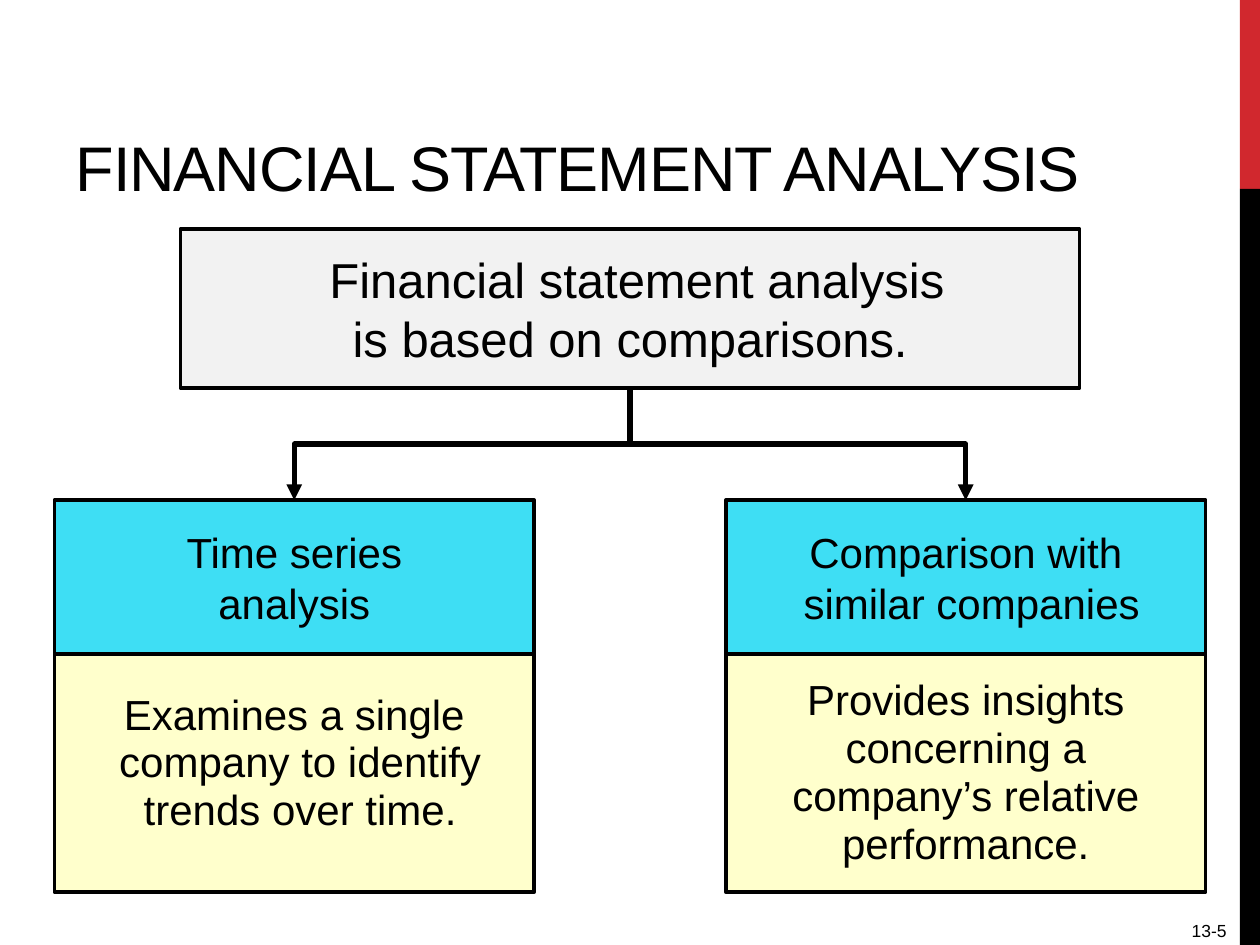
from lxml.etree import SubElement
from pptx import Presentation
from pptx.dml.color import RGBColor
from pptx.enum.shapes import MSO_CONNECTOR as Connector, MSO_SHAPE as Shape
from pptx.enum.text import MSO_ANCHOR as Anchor, MSO_AUTO_SIZE as AutoSize, PP_ALIGN as Align
from pptx.oxml.ns import qn
from pptx.util import Pt

COLORS = {"red": "D1282E", "black": "000000", "gray": "F2F2F2", "cyan": "3EDEF4", "cream": "FFFFCC"}
TITLE = "FINANCIAL STATEMENT ANALYSIS"
PREMISE = " Financial statement analysis\nis based on comparisons."
PAGE = "13-5"
BRANCHES = [
    {"left": 31, "detail_top": 362.9, "heading": "Time series\nanalysis",
     "detail": "Examines a single\n company to identify\n trends over time."},
    {"left": 414.7, "detail_top": 373.7, "heading": "Comparison with\n similar companies",
     "detail": "Provides insights\nconcerning a\ncompany’s relative\nperformance."},
]
STRIPES = [(0, 108, "red"), (108, 432, "black")]
PREMISE_BOX = (103, 131, 514, 90.7)
BRANCH_WIDTH, HEADING_TOP, HEADING_HEIGHT, DETAIL_BOTTOM = 274.3, 285.8, 87.9, 509.8


def color(name):
    return RGBColor.from_string(COLORS[name])


def place(shape, left, top, width, height):
    shape.left, shape.top, shape.width, shape.height = Pt(left), Pt(top), Pt(width), Pt(height)


def write(shape, text, size, align=Align.CENTER, anchor=Anchor.MIDDLE, wrap=True):
    frame = shape.text_frame
    frame.auto_size, frame.word_wrap, frame.vertical_anchor = AutoSize.NONE, wrap, anchor
    paragraph = frame.paragraphs[0]
    paragraph.text = text
    paragraph.alignment = align
    paragraph.font.name, paragraph.font.size = "Arial", Pt(size)
    paragraph.font.color.rgb = color("black")
    return paragraph


def paint(shape, fill):
    shape.fill.solid()
    shape.fill.fore_color.rgb = color(fill)
    shape.line.color.rgb = color("black")
    shape.line.width = Pt(2)


def add_box(slide, left, top, width, height, fill):
    shape = slide.shapes.add_shape(Shape.RECTANGLE, Pt(left), Pt(top), Pt(width), Pt(height))
    shape.shadow.inherit = False
    paint(shape, fill)
    return shape


def add_elbow_arrow(slide, start_x, start_y, end_x, end_y):
    center_x, center_y = (start_x + end_x) / 2, (start_y + end_y) / 2
    half_width, half_height = (end_y - start_y) / 2, abs(end_x - start_x) / 2
    direction = 1 if end_x < start_x else -1
    connector = slide.shapes.add_connector(
        Connector.ELBOW,
        Pt(center_x - direction * half_width), Pt(center_y - half_height),
        Pt(center_x + direction * half_width), Pt(center_y + half_height))
    properties = connector._element.spPr
    properties.find(qn("a:xfrm")).set("rot", "5400000" if direction == 1 else "16200000")
    connector.line.color.rgb = color("black")
    connector.line.width = Pt(3)
    SubElement(properties.find(qn("a:ln")), qn("a:tailEnd"), type="triangle")
    SubElement(properties, qn("a:effectLst"))


def main():
    presentation = Presentation()
    presentation.slide_width, presentation.slide_height = Pt(720), Pt(540)
    slide = presentation.slides.add_slide(presentation.slide_layouts[1])

    for top, height, fill in STRIPES:
        stripe = add_box(slide, 708.5, top, 11.5, height, fill)
        stripe.line.fill.background()

    page = slide.shapes.add_textbox(Pt(630), Pt(522), Pt(78), Pt(19.4))
    write(page, PAGE, 10, Align.RIGHT, Anchor.TOP)

    title = slide.shapes.title
    place(title, 36, 12.2, 660, 108)
    paragraph = write(title, TITLE, 36, Align.LEFT, Anchor.BOTTOM)
    paragraph.runs[0].font._element.set("spc", "-60")

    premise = slide.placeholders[1]
    place(premise, *PREMISE_BOX)
    paint(premise, "gray")
    paragraph = write(premise, PREMISE, 28)
    paragraph.space_before, paragraph.space_after = Pt(5.6), Pt(6)
    bullet_properties = paragraph._element.get_or_add_pPr()
    bullet_properties.set("marL", "0")
    bullet_properties.set("indent", "0")
    bullet = SubElement(bullet_properties, qn("a:buNone"))
    bullet_properties.find(qn("a:defRPr")).addprevious(bullet)

    premise_left, premise_top, premise_width, premise_height = PREMISE_BOX
    for branch in BRANCHES:
        left, top = branch["left"], branch["detail_top"]
        detail = add_box(slide, left, top, BRANCH_WIDTH, DETAIL_BOTTOM - top, "cream")
        write(detail, branch["detail"], 24, wrap=False).line_spacing = 0.95
        heading = add_box(slide, left, HEADING_TOP, BRANCH_WIDTH, HEADING_HEIGHT, "cyan")
        write(heading, branch["heading"], 24, wrap=False).space_before = Pt(12)
        add_elbow_arrow(slide, premise_left + premise_width / 2, premise_top + premise_height,
                        left + BRANCH_WIDTH / 2, HEADING_TOP)

    presentation.save("out.pptx")


if __name__ == "__main__":
    main()
